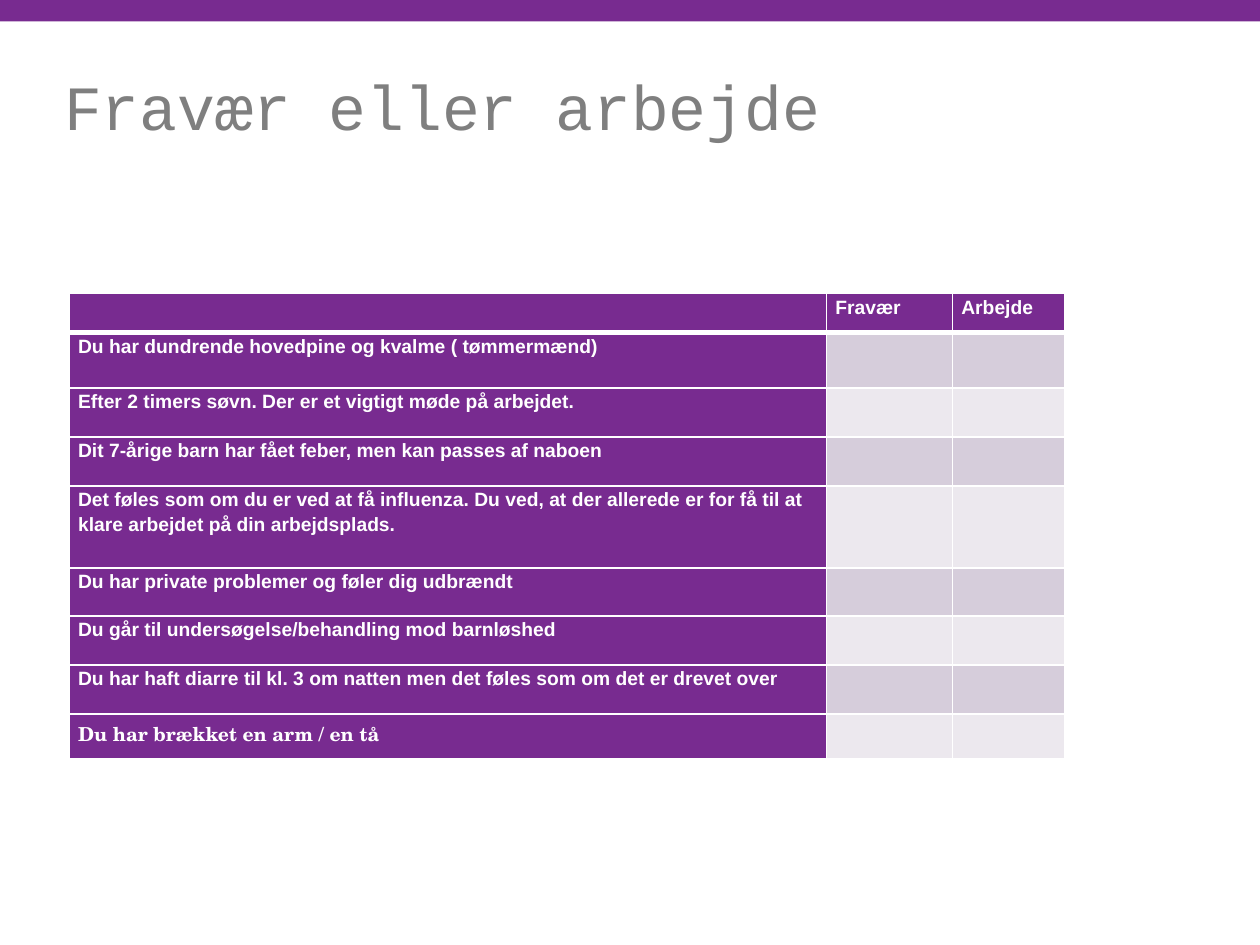
from dataclasses import dataclass

from lxml import etree
from pptx import Presentation, util as u
from pptx.dml.color import RGBColor
from pptx.enum import shapes, text
from pptx.oxml import ns


@dataclass(frozen=True)
class Theme:
    purple: str = "782B90"
    white: str = "FFFFFF"
    title_gray: str = "7F7F7F"
    bands: tuple = ("D6CDDB", "ECE8EE")
    title_font: str = "Courier New"
    body_font: str = "Arial"
    serif_font: str = "TeX Gyre Schola"
    title_size: int = 36
    body_size: int = 11
    thin: int = 1
    thick: int = 3


@dataclass(frozen=True)
class Row:
    height: float
    label: str
    font: str
    answers: tuple = ("", "")


THEME = Theme()
WIDTH, HEIGHT = u.Inches(10), u.Inches(7.5)
COLUMNS = (6.01, 1, 0.89)
ROWS = (
    Row(0.31, "", THEME.body_font, ("Fravær", "Arbejde")),
    Row(0.44, "Du har dundrende hovedpine og kvalme ( tømmermænd)", THEME.body_font),
    Row(0.39, "Efter 2 timers søvn. Der er et vigtigt møde på arbejdet.", THEME.body_font),
    Row(0.39, "Dit 7-årige barn har fået feber, men kan passes af naboen", THEME.body_font),
    Row(0.65, "Det føles som om du er ved at få influenza. Du ved, at der allerede "
              "er for få til at klare arbejdet på din arbejdsplads.", THEME.body_font),
    Row(0.38, "Du har private problemer og føler dig udbrændt", THEME.body_font),
    Row(0.39, "Du går til undersøgelse/behandling mod barnløshed", THEME.body_font),
    Row(0.39, "Du har haft diarre til kl. 3 om natten men det føles som om det er "
              "drevet over", THEME.body_font),
    Row(0.35, "Du har brækket en arm / en tå", THEME.serif_font),
)


def color(value: str) -> RGBColor:
    return RGBColor.from_string(value)


def set_borders(cell, top: int, bottom: int) -> None:
    """Draw white cell borders; must run before the fill is set."""
    properties = cell._tc.get_or_add_tcPr()
    widths = {"L": THEME.thin, "R": THEME.thin, "T": top, "B": bottom}
    for side, width in widths.items():
        line = etree.SubElement(properties, ns.qn(f"a:ln{side}"), w=str(u.Pt(width)))
        fill = etree.SubElement(line, ns.qn("a:solidFill"))
        etree.SubElement(fill, ns.qn("a:srgbClr"), val=THEME.white)


def write_cell(cell, content: str, font: str, fill: str) -> None:
    cell.margin_left = cell.margin_right = u.Inches(0.07)
    cell.margin_top = cell.margin_bottom = 0
    cell.fill.solid()
    cell.fill.fore_color.rgb = color(fill)
    cell.text = content
    paragraph = cell.text_frame.paragraphs[0]
    paragraph.line_spacing = 1.15
    paragraph.font.name = font
    paragraph.font.size = u.Pt(THEME.body_size)
    paragraph.font.bold = True
    paragraph.font.color.rgb = color(THEME.white)


def add_band(slide) -> None:
    band = slide.shapes.add_shape(
        shapes.MSO_SHAPE.RECTANGLE, 0, 0, WIDTH, u.Inches(0.17))
    band.shadow.inherit = False
    band.fill.solid()
    band.fill.fore_color.rgb = color(THEME.purple)
    band.line.fill.background()


def add_title(slide, content: str) -> None:
    box = slide.shapes.add_textbox(
        u.Inches(0.51), u.Inches(0.64), u.Inches(8.94), u.Inches(1.22))
    frame = box.text_frame
    frame.word_wrap = True
    frame.vertical_anchor = text.MSO_ANCHOR.TOP
    frame.margin_left = frame.margin_right = frame.margin_top = frame.margin_bottom = 0
    frame.text = content
    paragraph = frame.paragraphs[0]
    paragraph.line_spacing = 0.83
    paragraph.font.name = THEME.title_font
    paragraph.font.size = u.Pt(THEME.title_size)
    paragraph.font.color.rgb = color(THEME.title_gray)


def add_question_table(slide) -> None:
    table = slide.shapes.add_table(
        len(ROWS), len(COLUMNS), u.Inches(0.55), u.Inches(2.33),
        u.Inches(sum(COLUMNS)), u.Inches(sum(row.height for row in ROWS))).table
    for column, width in zip(table.columns, COLUMNS):
        column.width = u.Inches(width)
    for r, row in enumerate(ROWS):
        table.rows[r].height = u.Inches(row.height)
        top = THEME.thick if r == 1 else THEME.thin
        bottom = THEME.thick if r == 0 else THEME.thin
        for c, content in enumerate((row.label, *row.answers)):
            is_heading = r == 0 or c == 0
            fill = THEME.purple if is_heading else THEME.bands[(r - 1) % 2]
            font = row.font if c == 0 else THEME.body_font
            cell = table.cell(r, c)
            set_borders(cell, top, bottom)
            write_cell(cell, content, font, fill)


def main() -> None:
    presentation = Presentation()
    presentation.slide_width, presentation.slide_height = WIDTH, HEIGHT
    slide = presentation.slides.add_slide(presentation.slide_layouts[6])
    add_band(slide)
    add_title(slide, "Fravær eller arbejde")
    add_question_table(slide)
    presentation.save("out.pptx")


if __name__ == "__main__":
    main()
